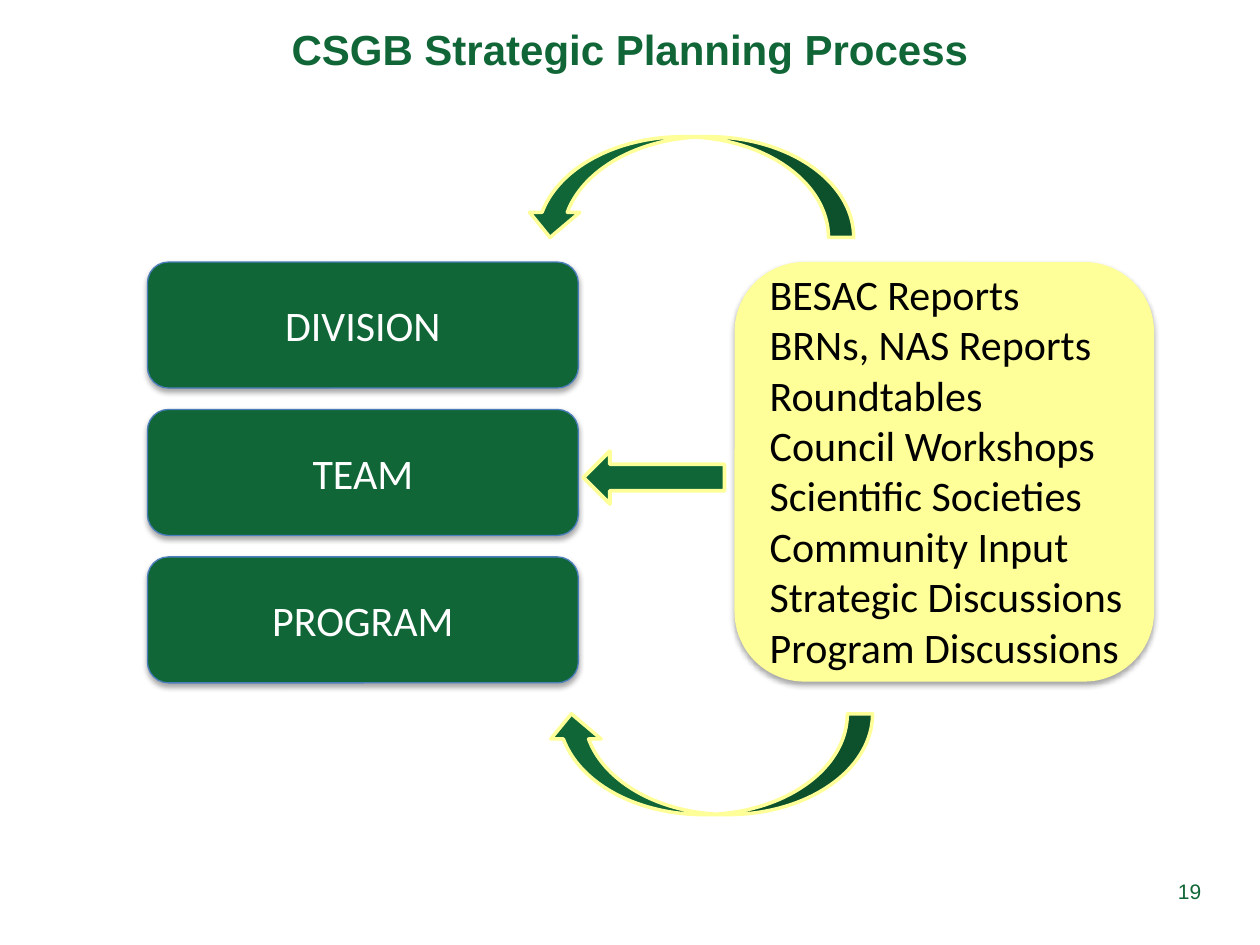
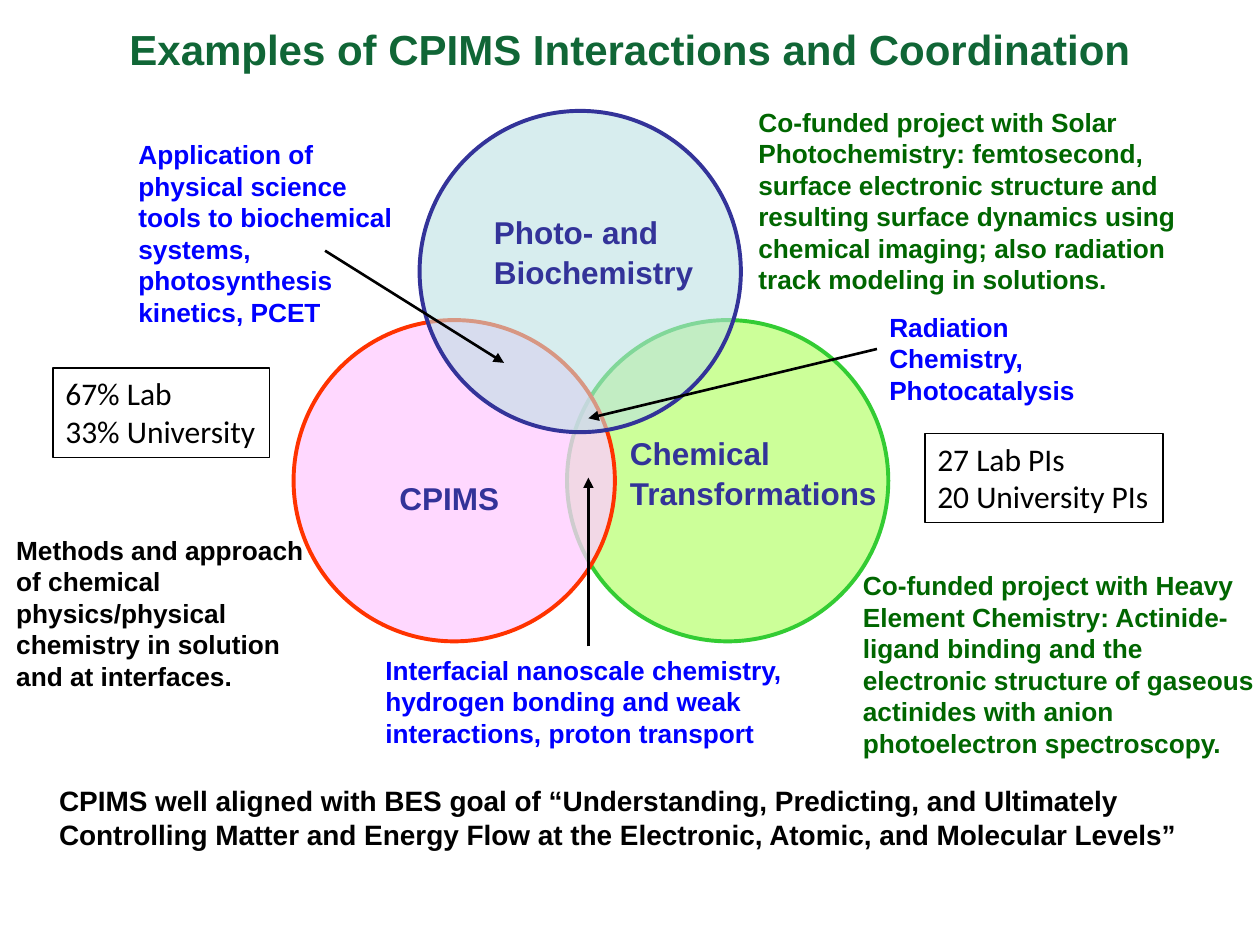
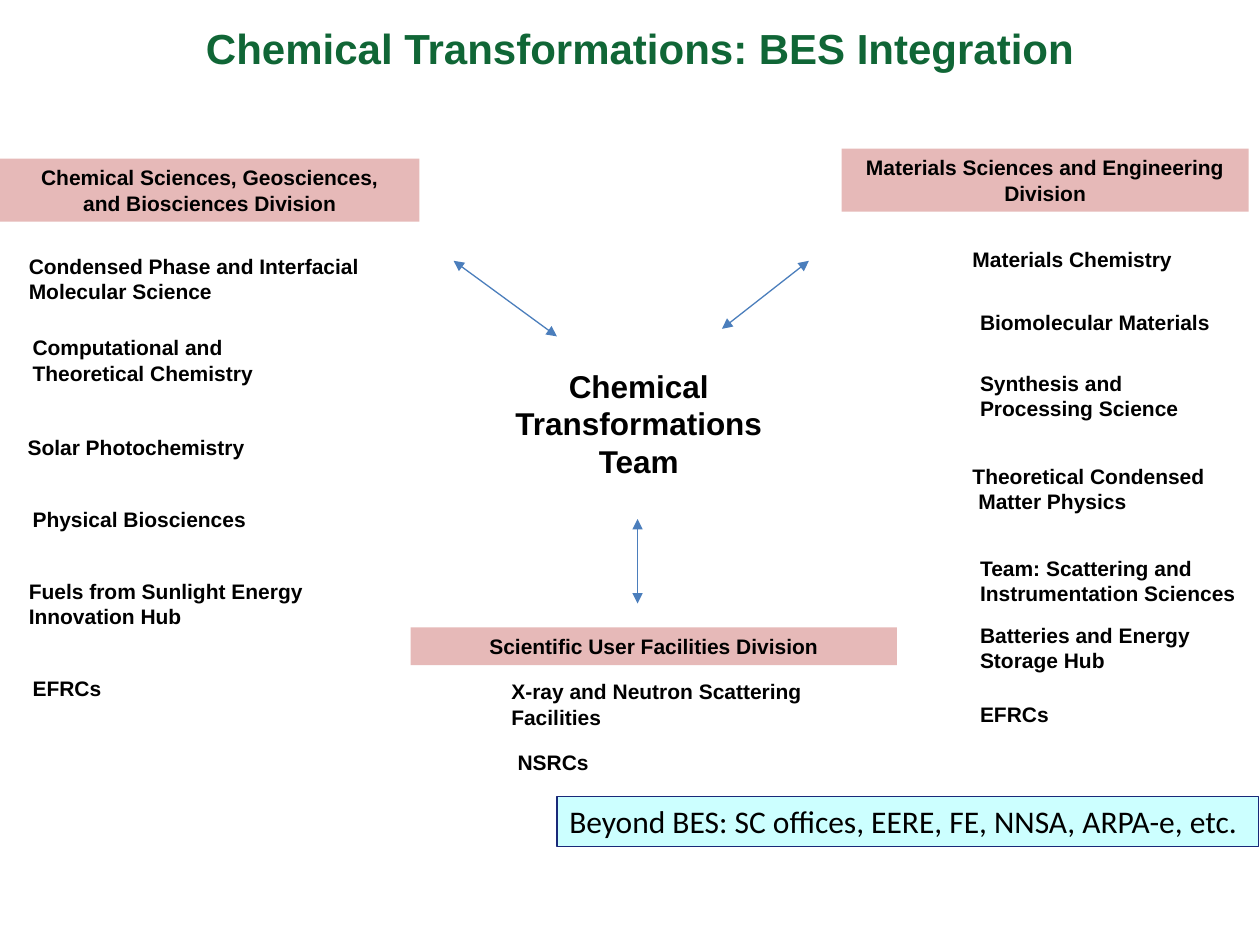
"""Build three slides on strategic planning, team interactions and programme integration."""
from dataclasses import dataclass

from lxml.etree import SubElement
from pptx import Presentation
from pptx.dml.color import RGBColor
from pptx.enum.shapes import MSO_CONNECTOR, MSO_SHAPE
from pptx.enum.text import MSO_ANCHOR, PP_ALIGN
from pptx.oxml.ns import qn
from pptx.util import Inches, Pt


@dataclass(frozen=True)
class Theme:
    green: str = "106636"
    yellow: str = "FFFF99"
    steel: str = "4B7EBC"
    black: str = "000000"
    white: str = "FFFFFF"
    blue: str = "0000FF"
    forest: str = "006600"
    indigo: str = "333399"
    pink: str = "E6B9B8"
    cyan: str = "CCFFFF"
    navy: str = "192979"
    head: str = "Arial"
    body: str = "Calibri"
    large: int = 24
    medium: int = 18
    goal: int = 16
    note: int = 15
    small: int = 12


T = Theme()
prs = Presentation()
prs.slide_width, prs.slide_height = Inches(10), Inches(7.5)
COL, ROW = prs.slide_width / 100, prs.slide_height / 75


def box(s, at, text="", size=T.small, color=T.black, font=T.head, kind=None, fill=None, alpha=None,
        line=None, width=0.75, shadow=False, center=False, middle=False, wrap=True, inset=0.1, spacing=None):
    """Place a text box or preset shape on the grid and fill in its text."""
    x, y, w, h = at
    frame = [round(v) for v in (x * COL, y * ROW, w * COL, h * ROW)]
    sp = s.shapes.add_textbox(*frame) if kind is None else s.shapes.add_shape(kind, *frame)
    if kind is not None:
        sp.shadow.inherit = False
        if fill:
            sp.fill.solid()
            sp.fill.fore_color.rgb = RGBColor.from_string(fill)
        else:
            sp.fill.background()
        if line:
            sp.line.color.rgb = RGBColor.from_string(line)
            sp.line.width = Pt(width)
        else:
            sp.line.fill.background()
        spPr = sp._element.spPr
        if alpha:
            SubElement(spPr.find(qn("a:solidFill"))[0], qn("a:alpha"), val=str(alpha * 1000))
        if shadow:
            shade = SubElement(spPr.find(qn("a:effectLst")), qn("a:outerShdw"), blurRad="40000",
                               dist="23000", dir="5400000", rotWithShape="0")
            SubElement(SubElement(shade, qn("a:srgbClr"), val=T.black), qn("a:alpha"), val="35000")
    if text:
        tf = sp.text_frame
        tf.word_wrap = wrap
        tf.margin_left = tf.margin_right = Inches(inset)
        tf.vertical_anchor = MSO_ANCHOR.MIDDLE if middle else MSO_ANCHOR.TOP
        for i, words in enumerate(text.split("\n")):
            p = tf.add_paragraph() if i else tf.paragraphs[0]
            p.alignment = PP_ALIGN.CENTER if center else PP_ALIGN.LEFT
            p.line_spacing = spacing
            r = p.add_run()
            r.text = words
            r.font.name, r.font.size = font, Pt(size)
            r.font.bold = font == T.head
            r.font.color.rgb = RGBColor.from_string(color)
    return sp


def arrow(s, start, end, color, width, ends):
    """Draw a straight connector with the given arrowheads."""
    c = s.shapes.add_connector(MSO_CONNECTOR.STRAIGHT, round(start[0] * COL), round(start[1] * ROW),
                               round(end[0] * COL), round(end[1] * ROW))
    c.line.color.rgb = RGBColor.from_string(color)
    c.line.width = Pt(width)
    for tag in ends:
        SubElement(c.line._get_or_add_ln(), qn(tag), type="triangle")
    SubElement(c._element.spPr, qn("a:effectLst"))


slides = []
for title, (x, y, w, h) in (
    ("CSGB Strategic Planning Process", (0, -2.4, 100, 12.5)),
    ("Examples of CPIMS Interactions and Coordination", (0, -2.4, 100, 12.5)),
    ("Chemical Transformations: BES Integration", (2.8, 0.9, 96, 5.8)),
):
    s = prs.slides.add_slide(prs.slide_layouts[5])
    sp = s.shapes.title
    sp.left, sp.top, sp.width, sp.height = round(x * COL), round(y * ROW), round(w * COL), round(h * ROW)
    tf = sp.text_frame
    tf.vertical_anchor = MSO_ANCHOR.MIDDLE
    p = tf.paragraphs[0]
    p.alignment = PP_ALIGN.CENTER
    r = p.add_run()
    r.text = title
    r.font.name, r.font.size, r.font.bold = T.head, Pt(T.large), True
    r.font.color.rgb = RGBColor.from_string(T.green)
    slides.append(s)
planning, interactions, integration = slides

s = planning
box(s, (58.3, 20.8, 33.3, 33.3), kind=MSO_SHAPE.ROUNDED_RECTANGLE, fill=T.yellow, shadow=True)
box(s, (60.1, 20.8, 32.1, 41.4),
    "BESAC Reports\nBRNs, NAS Reports\nRoundtables\nCouncil Workshops\nScientific Societies\n"
    "Community Input\nStrategic Discussions\nProgram Discussions", T.large, font=T.body)
for at, flip in (((50.7, 1.8, 8, 26.1), "0"), ((52.3, 47.7, 8, 25.9), "1")):
    sp = box(s, at, kind=MSO_SHAPE.CURVED_RIGHT_ARROW, fill=T.green, line=T.yellow, width=2)
    sp.rotation = 90
    sp._element.spPr.find(qn("a:xfrm")).set("flipH", flip)
for i, level in enumerate(("DIVISION", "TEAM", "PROGRAM")):
    box(s, (11.7, 20.8 + 11.7 * i, 34.2, 10), level, T.large, T.white, T.body,
        MSO_SHAPE.ROUNDED_RECTANGLE, T.green, line=T.steel, shadow=True, center=True, middle=True)
box(s, (46.3, 35.8, 11.2, 4.2), kind=MSO_SHAPE.LEFT_ARROW, fill=T.green, line=T.yellow, width=2.25)
sp = box(s, (92.5, 69.2, 3.9, 3), "19", T.small, T.green, wrap=False)
sp.text_frame.paragraphs[0].runs[0].font.bold = False

s = interactions
for x, y, fill, alpha, line, label, at in (
    (45, 25.4, "CCFF99", None, "33CC33", "Chemical\nTransformations", (50, 33.8, 20, 7.5)),
    (23.3, 25.4, "FFCCFF", 76, "FF3300", "CPIMS", (31.7, 37.4, 8, 3.9)),
    (33.3, 8.8, "BBE0E3", 58, T.indigo, "Photo- and Biochemistry", (39.2, 16.3, 18.3, 7.3)),
):
    box(s, (x, y, 25.5, 25.5), kind=MSO_SHAPE.OVAL, fill=fill, alpha=alpha, line=line, width=2.25)
    box(s, at, label, T.medium, T.indigo, inset=0, spacing=1.05)
for at, color, size, text in (
    ((59.2, 7.9, 39.2, 16.1), T.forest, T.note,
     "Co-funded project with Solar Photochemistry: femtosecond, surface electronic structure and "
     "resulting surface dynamics using chemical imaging; also radiation track modeling in solutions."),
    ((0.3, 41.9, 25.5, 13.6), T.black, T.note,
     "Methods and approach of chemical physics/physical chemistry in solution and at interfaces."),
    ((10, 10.5, 22.5, 16.2), T.blue, T.note,
     "Application of physical science tools to biochemical systems, photosynthesis kinetics, PCET"),
    ((69.6, 24.2, 18.3, 8.6), T.blue, T.note, "Radiation Chemistry, Photocatalysis"),
    ((29.6, 51.4, 34.1, 8.6), T.blue, T.note,
     "Interfacial nanoscale chemistry, hydrogen bonding and weak interactions, proton transport"),
    ((67.5, 44.7, 33.3, 16.1), T.forest, T.note,
     "Co-funded project with Heavy Element Chemistry: Actinide-ligand binding and the electronic "
     "structure of gaseous actinides with anion photoelectron spectroscopy."),
    ((3.7, 61.7, 91.9, 6.4), T.black, T.goal,
     "CPIMS well aligned with BES goal of “Understanding, Predicting, and Ultimately Controlling "
     "Matter and Energy Flow at the Electronic, Atomic, and Molecular Levels”"),
):
    box(s, at, text, size, color)
for start, end in (((25.8, 19.9), (40, 28.8)), ((69.6, 27.7), (46.7, 33.2)), ((46.7, 51.3), (46.7, 37.9))):
    arrow(s, start, end, T.black, 1.5, ("a:tailEnd",))
for at, text in (((4.2, 29.2, 17.2, 7.1), "67% Lab\n33% University"),
                 ((73.4, 34.4, 18.9, 7.1), "27 Lab PIs\n20 University PIs")):
    box(s, at, text, T.medium, font=T.body, kind=MSO_SHAPE.RECTANGLE, line=T.black, wrap=False)

s = integration
box(s, (39.8, 28.6, 21.8, 10.1), "Chemical Transformations\nTeam", T.medium, center=True)
for at, division in (
    ((0, 12.6, 33.3, 5), "Chemical Sciences, Geosciences,\nand Biosciences Division"),
    ((66.8, 11.8, 32.3, 5), "Materials Sciences and Engineering Division"),
    ((32.6, 49.8, 38.6, 3), "Scientific User Facilities Division"),
):
    box(s, at, division, kind=MSO_SHAPE.RECTANGLE, fill=T.pink, center=True)
for width, programs in (
    (30.5, (
        (1.3, 19.6, "Condensed Phase and Interfacial Molecular Science"),
        (1.3, 45.4, "Fuels from Sunlight Energy Innovation Hub"),
        (1.2, 34, "Solar Photochemistry"),
        (1.6, 39.7, "Physical Biosciences"),
        (1.6, 53.1, "EFRCs"))),
    (22.9, ((1.6, 26.1, "Computational and Theoretical Chemistry"),)),
    (31.6, (
        (39.6, 53.4, "X-ray and Neutron Scattering Facilities"),
        (40.1, 59, "NSRCs"))),
    (34, (
        (76.2, 19.1, "Materials Chemistry"),
        (76.8, 24.1, "Biomolecular Materials"),
        (76.8, 28.9, "Synthesis and\nProcessing Science"),
        (76.2, 36.3, "Theoretical Condensed\n Matter Physics"),
        (76.8, 43.6, "Team: Scattering and\nInstrumentation Sciences"),
        (76.8, 48.9, "Batteries and Energy\nStorage Hub"),
        (76.8, 55.2, "EFRCs"))),
):
    for x, y, program in programs:
        box(s, (x, y, width, 3), program)
for start, end in (((44.2, 26.7), (36, 20.7)), ((57.3, 26.1), (64.2, 20.7)), ((50.6, 41.2), (50.6, 47.9))):
    arrow(s, start, end, T.steel, 0.75, ("a:headEnd", "a:tailEnd"))
box(s, (44.2, 63.2, 55.7, 4), "Beyond BES: SC offices, EERE, FE, NNSA, ARPA-e, etc.", T.medium, font=T.body,
    kind=MSO_SHAPE.RECTANGLE, fill=T.cyan, line=T.navy, wrap=False)

prs.save("out.pptx")
